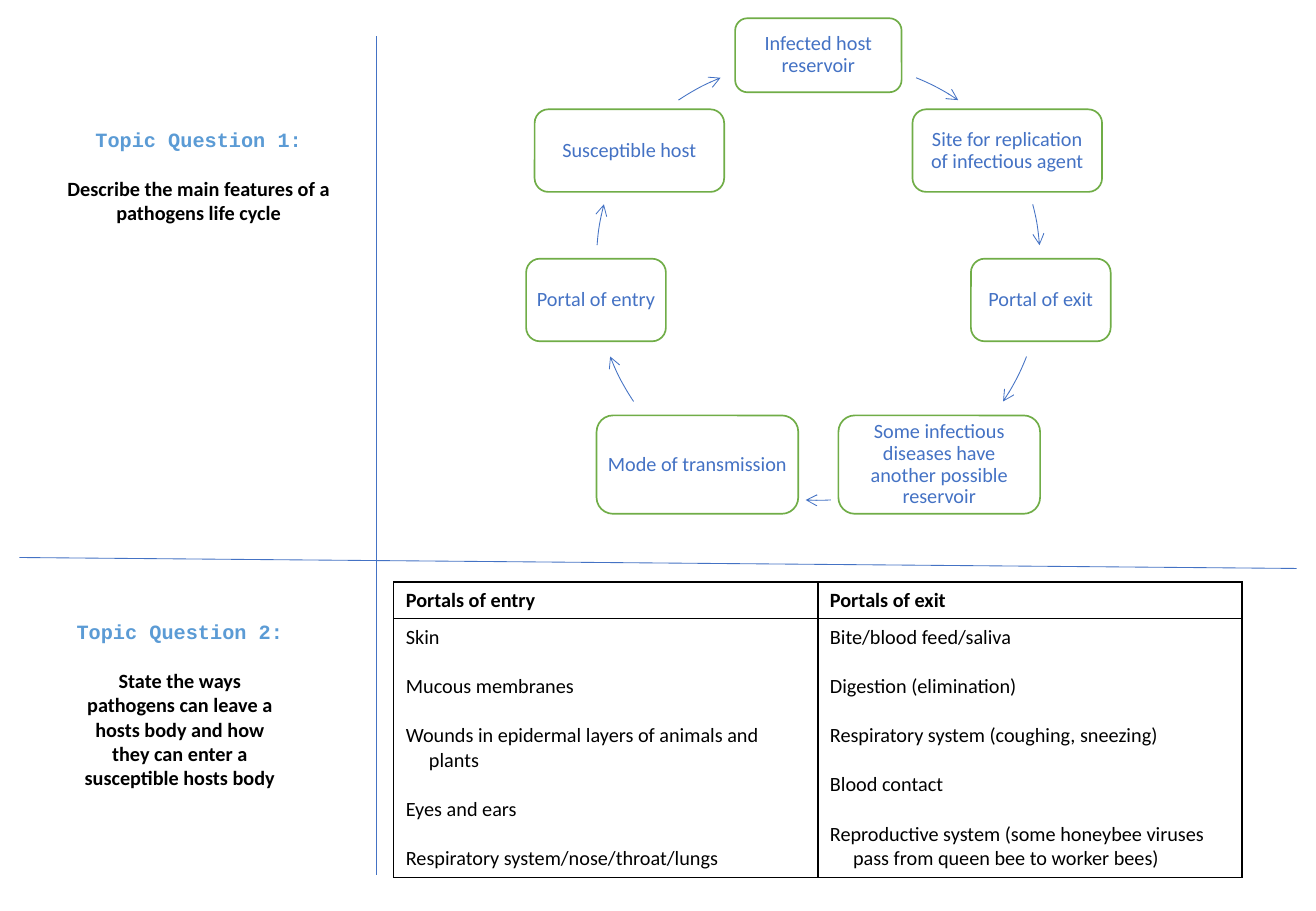
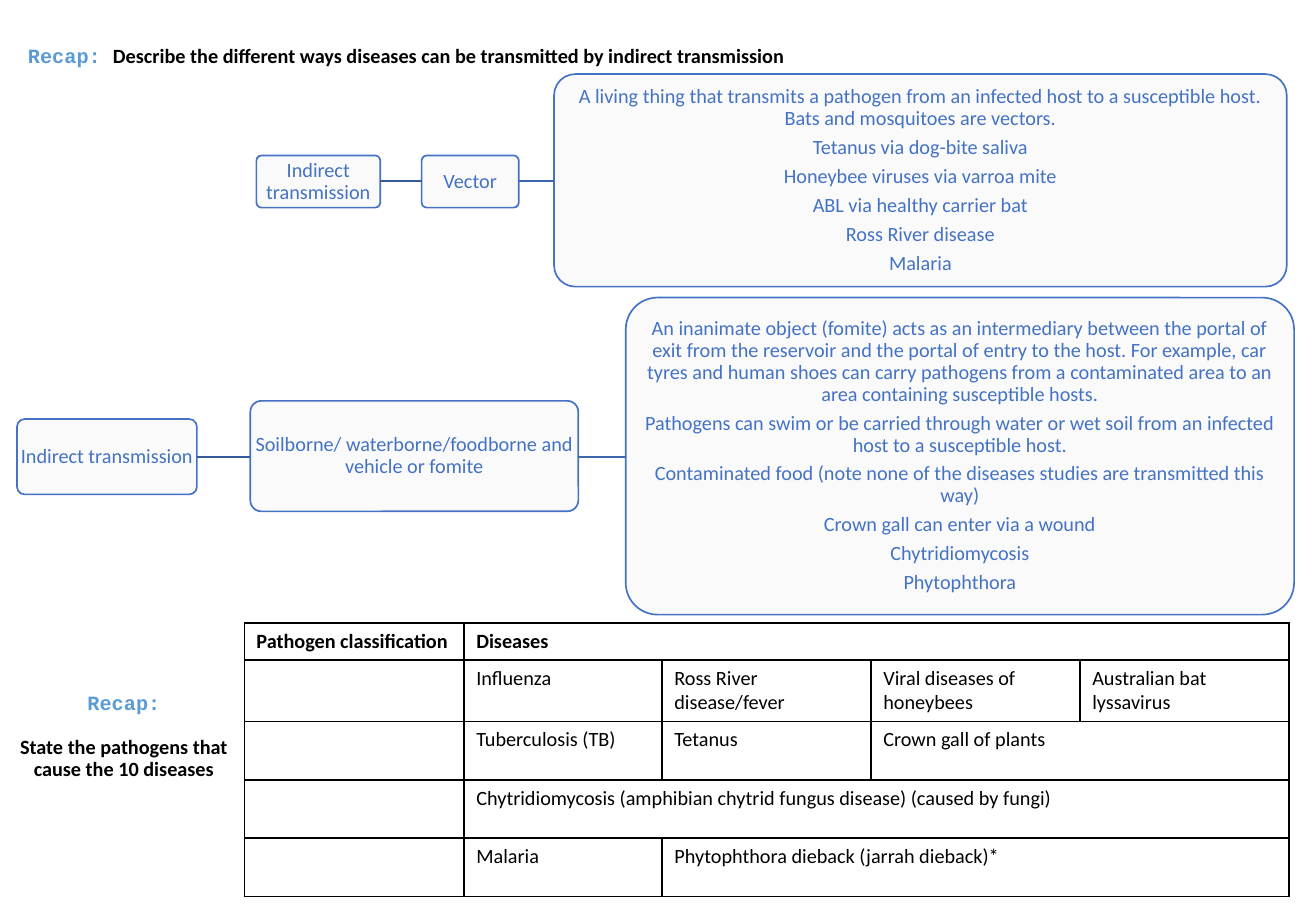
from lxml import etree
from pptx import Presentation
from pptx.dml.color import RGBColor
from pptx.enum.shapes import MSO_CONNECTOR, MSO_SHAPE
from pptx.enum.text import MSO_ANCHOR, MSO_AUTO_SIZE, PP_ALIGN
from pptx.oxml.ns import qn
from pptx.util import Inches, Pt

ROUND_RECT, ARC = MSO_SHAPE.ROUNDED_RECTANGLE, MSO_SHAPE.ARC
STRAIGHT = MSO_CONNECTOR.STRAIGHT
MIDDLE, NO_FIT = MSO_ANCHOR.MIDDLE, MSO_AUTO_SIZE.NONE
LEFT, CENTER = PP_ALIGN.LEFT, PP_ALIGN.CENTER

COLORS = {
    "white": "FFFFFF", "black": "000000", "blue": "4472C4", "green": "70AD47",
    "heading": "5B9BD5", "panel": "FAFAFA", "link1": "365B9D", "link2": "3E67B2",
}
BODY_FONT, HEADING_FONT = "Calibri", "Courier New"
SIZE = Pt(12)
TITLE_ONLY = 5

CYCLE_AXIS, CYCLE_DIAMETER = 6.735, 3.66
CYCLE_TOP = ("Infected host reservoir", 6.05, 0.15, 1.37, 0.61)
CYCLE_PAIRS = [
    ("Site for replication of infectious agent", "Susceptible host", 7.51, 0.9, 1.56, 0.68),
    ("Portal of exit", "Portal of entry", 7.99, 2.13, 1.15, 0.68),
    ("Some infectious diseases have another possible reservoir",
     "Mode of transmission", 6.9, 3.42, 1.66, 0.81),
]
CYCLE_ARCS = [(6.86, 2.34, 291.8, 304.1), (6.73, 2.15, 345.2, 355.9), (6.74, 2.28, 21, 34.1)]
CYCLE_BOTTOM_ARC = (6.73, 2.29, 86.6, 93.1)

PORTALS = {
    "Portals of entry": [
        "Skin", "Mucous membranes", "Wounds in epidermal layers of animals and plants",
        "Eyes and ears", "Respiratory system/nose/throat/lungs",
    ],
    "Portals of exit": [
        "Bite/blood feed/saliva", "Digestion (elimination)",
        "Respiratory system (coughing, sneezing)", "Blood contact",
        "Reproductive system (some honeybee viruses pass from queen bee to worker bees)",
    ],
}

VECTOR_CHAIN = [
    (["Indirect transmission"], 2.11, 1.28, 1.02, 0.43),
    (["Vector"], 3.47, 1.28, 0.8, 0.43),
    (["A living thing that transmits a pathogen from an infected host to a susceptible host. "
      "Bats and mosquitoes are vectors.",
      "Tetanus via dog-bite saliva", "Honeybee viruses via varroa mite",
      "ABL via healthy carrier bat", "Ross River disease", "Malaria"], 4.56, 0.61, 6.03, 1.75),
]
FOMITE_CHAIN = [
    (["Indirect transmission"], 0.14, 3.45, 1.48, 0.62),
    (["Soilborne/ waterborne/foodborne and vehicle or fomite"], 2.06, 3.3, 2.7, 0.91),
    (["An inanimate object (fomite) acts as an intermediary between the portal of exit from the "
      "reservoir and the portal of entry to the host. For example, car tyres and human shoes can "
      "carry pathogens from a contaminated area to an area containing susceptible hosts.",
      "Pathogens can swim or be carried through water or wet soil from an infected host to a "
      "susceptible host.",
      "Contaminated food (note none of the diseases studies are transmitted this way)",
      "Crown gall can enter via a wound", "Chytridiomycosis", "Phytophthora"],
     5.15, 2.45, 5.5, 2.61),
]

DISEASES = [
    ["Pathogen classification", "Diseases"],
    ["", "Influenza", "Ross River disease/fever", "Viral diseases of honeybees",
     "Australian bat lyssavirus"],
    ["", "Tuberculosis (TB)", "Tetanus", "Crown gall of plants"],
    ["", "Chytridiomycosis (amphibian chytrid fungus disease) (caused by fungi)"],
    ["", "Malaria", "Phytophthora dieback (jarrah dieback)*"],
]


def rgb(name):
    return RGBColor.from_string(COLORS[name])


def add_run(p, text, color, font=BODY_FONT, bold=False):
    r = p.add_run()
    r.text = text
    r.font.name, r.font.size, r.font.bold = font, SIZE, bold
    r.font.color.rgb = rgb(color)


def add_paragraphs(tf, texts, color, align=LEFT, bold=False, spacing=1.0, before=0, after=0):
    for i, text in enumerate(texts):
        p = tf.add_paragraph() if i else tf.paragraphs[0]
        p.alignment, p.line_spacing = align, spacing
        p.space_before, p.space_after = Pt(before if i else 0), Pt(after)
        add_run(p, text, color, bold=bold)


def place(sp, left, top, width, height):
    sp.left, sp.top = Inches(left), Inches(top)
    sp.width, sp.height = Inches(width), Inches(height)


def write_prompt(sp, box, heading, question, spacing=1.0, inline=False):
    place(sp, *box)
    tf = sp.text_frame
    tf.word_wrap, tf.auto_size, tf.vertical_anchor = True, NO_FIT, MIDDLE
    p = tf.paragraphs[0]
    add_run(p, heading, "heading", HEADING_FONT, True)
    if not inline:
        p = tf.add_paragraph()
        p.space_before = Pt(14.6 * spacing)
    add_run(p, question, "black", bold=True)
    for p in tf.paragraphs:
        p.alignment, p.line_spacing = (LEFT if inline else CENTER), spacing


def add_side_prompt(slide, box, heading, question, spacing=1.0):
    sp = slide.shapes.add_textbox(0, 0, 0, 0)
    write_prompt(sp, box, heading, question, spacing)


def add_node(slide, texts, left, top, width, height, fill, line, inset, adj=None):
    sp = slide.shapes.add_shape(
        ROUND_RECT, Inches(left), Inches(top), Inches(width), Inches(height))
    sp.shadow.inherit = False
    if adj is not None:
        sp.adjustments[0] = adj
    sp.fill.solid()
    sp.fill.fore_color.rgb = rgb(fill)
    sp.line.color.rgb, sp.line.width = rgb(line), Pt(1)
    tf = sp.text_frame
    tf.word_wrap, tf.vertical_anchor = True, MIDDLE
    tf.margin_left = tf.margin_right = tf.margin_top = tf.margin_bottom = Inches(inset)
    add_paragraphs(tf, texts, "blue", CENTER, spacing=0.9, after=4.2 if len(texts) > 1 else 0)


def add_line(slide, x1, y1, x2, y2, color, weight):
    cxn = slide.shapes.add_connector(STRAIGHT, Inches(x1), Inches(y1), Inches(x2), Inches(y2))
    cxn.line.color.rgb, cxn.line.width = rgb(color), Pt(weight)
    etree.SubElement(cxn._element.spPr, qn("a:effectLst"))


def add_arc_arrow(slide, cx, cy, start, end):
    radius = CYCLE_DIAMETER / 2
    sp = slide.shapes.add_shape(
        ARC, Inches(cx - radius), Inches(cy - radius),
        Inches(CYCLE_DIAMETER), Inches(CYCLE_DIAMETER))
    sp.shadow.inherit = False
    sp.adjustments[0], sp.adjustments[1] = start % 360 * 0.6, end % 360 * 0.6
    sp.fill.background()
    sp.line.color.rgb, sp.line.width = rgb("blue"), Pt(0.5)
    etree.SubElement(sp.line._get_or_add_ln(), qn("a:tailEnd"), type="arrow")


def add_cycle(slide):
    style = ("white", "green", 0.04)
    add_node(slide, [CYCLE_TOP[0]], *CYCLE_TOP[1:], *style)
    for right_text, left_text, left, top, width, height in CYCLE_PAIRS:
        mirrored = 2 * CYCLE_AXIS - left - width
        add_node(slide, [right_text], left, top, width, height, *style)
        add_node(slide, [left_text], mirrored, top, width, height, *style)
    for cx, cy, start, end in CYCLE_ARCS:
        add_arc_arrow(slide, cx, cy, start, end)
        add_arc_arrow(slide, 2 * CYCLE_AXIS - cx, cy, 180 - end, 180 - start)
    add_arc_arrow(slide, *CYCLE_BOTTOM_ARC)


def add_chain(slide, nodes, y):
    for texts, *box in nodes:
        add_node(slide, texts, *box, "panel", "blue", 0.01, 0.1)
    for (_, left, _, width, _), after, color in zip(nodes, nodes[1:], ("link1", "link2")):
        add_line(slide, left + width, y, after[1], y, color, 1)


def style_cell(cell):
    tcPr = cell._tc.get_or_add_tcPr()
    for side in ("lnL", "lnR", "lnT", "lnB"):
        ln = etree.SubElement(tcPr, qn(f"a:{side}"), w=str(Pt(1)))
        fill = etree.SubElement(ln, qn("a:solidFill"))
        etree.SubElement(fill, qn("a:srgbClr"), val=COLORS["black"])
    cell.fill.solid()
    cell.fill.fore_color.rgb = rgb("white")


def add_grid(slide, left, top, widths, heights):
    frame = slide.shapes.add_table(
        len(heights), len(widths), Inches(left), Inches(top),
        Inches(sum(widths)), Inches(sum(heights)))
    table = frame.table
    table.first_row = table.horz_banding = False
    for column, width in zip(table.columns, widths):
        column.width = Inches(width)
    for row, height in zip(table.rows, heights):
        row.height = Inches(height)
    for cell in table.iter_cells():
        style_cell(cell)
    return table


def add_portals_table(slide):
    table = add_grid(slide, 3.24, 4.79, [3.49] * 2, [0.3, 2.13])
    for c, (heading, items) in enumerate(PORTALS.items()):
        add_paragraphs(table.cell(0, c).text_frame, [heading], "black", bold=True)
        tf = table.cell(1, c).text_frame
        add_paragraphs(tf, items, "black", before=14.6)
        for p in tf.paragraphs:
            pPr = p._p.get_or_add_pPr()
            pPr.set("marL", str(Inches(0.19)))
            pPr.set("indent", str(-Inches(0.19)))


def add_diseases_table(slide):
    widths = [1.81, 1.63] + [1.72] * 3
    table = add_grid(slide, 2.01, 5.13, widths, [0.3, 0.5] + [0.48] * 3)
    last = len(widths) - 1
    for r, texts in enumerate(DISEASES):
        end = len(texts) - 1
        if end < last:
            table.cell(r, end).merge(table.cell(r, last))
        for c, text in enumerate(texts):
            if text:
                add_paragraphs(table.cell(r, c).text_frame, [text], "black", bold=r == 0)


def build_topics(prs):
    s = prs.slides.add_slide(prs.slide_layouts[TITLE_ONLY])
    add_line(s, 3.1, 0.3, 3.1, 7.2, "blue", 0.5)
    add_line(s, 0.16, 4.59, 10.67, 4.68, "blue", 0.5)
    write_prompt(s.shapes.title, (0.24, 1.0, 2.79, 0.9), "Topic Question 1:",
                 "Describe the main features of a pathogens life cycle")
    add_side_prompt(s, (0.52, 5.05, 1.92, 1.5), "Topic Question 2:",
                    "State the ways pathogens can leave a hosts body and how they can enter "
                    "a susceptible hosts body")
    add_cycle(s)
    add_portals_table(s)


def build_recap(prs):
    s = prs.slides.add_slide(prs.slide_layouts[TITLE_ONLY])
    write_prompt(s.shapes.title, (0.13, 0.27, 10.5, 0.4), "Recap: ",
                 "Describe the different ways diseases can be transmitted by indirect "
                 "transmission", 0.9, inline=True)
    add_chain(s, VECTOR_CHAIN, 1.49)
    add_chain(s, FOMITE_CHAIN, 3.76)
    add_diseases_table(s)
    add_side_prompt(s, (0, 5.26, 2.04, 1.62), "Recap:",
                    "State the pathogens that cause the 10 diseases", 0.9)


def main():
    prs = Presentation()
    prs.slide_width, prs.slide_height = Inches(10.83), Inches(7.5)
    build_topics(prs)
    build_recap(prs)
    prs.save("out.pptx")


if __name__ == "__main__":
    main()
